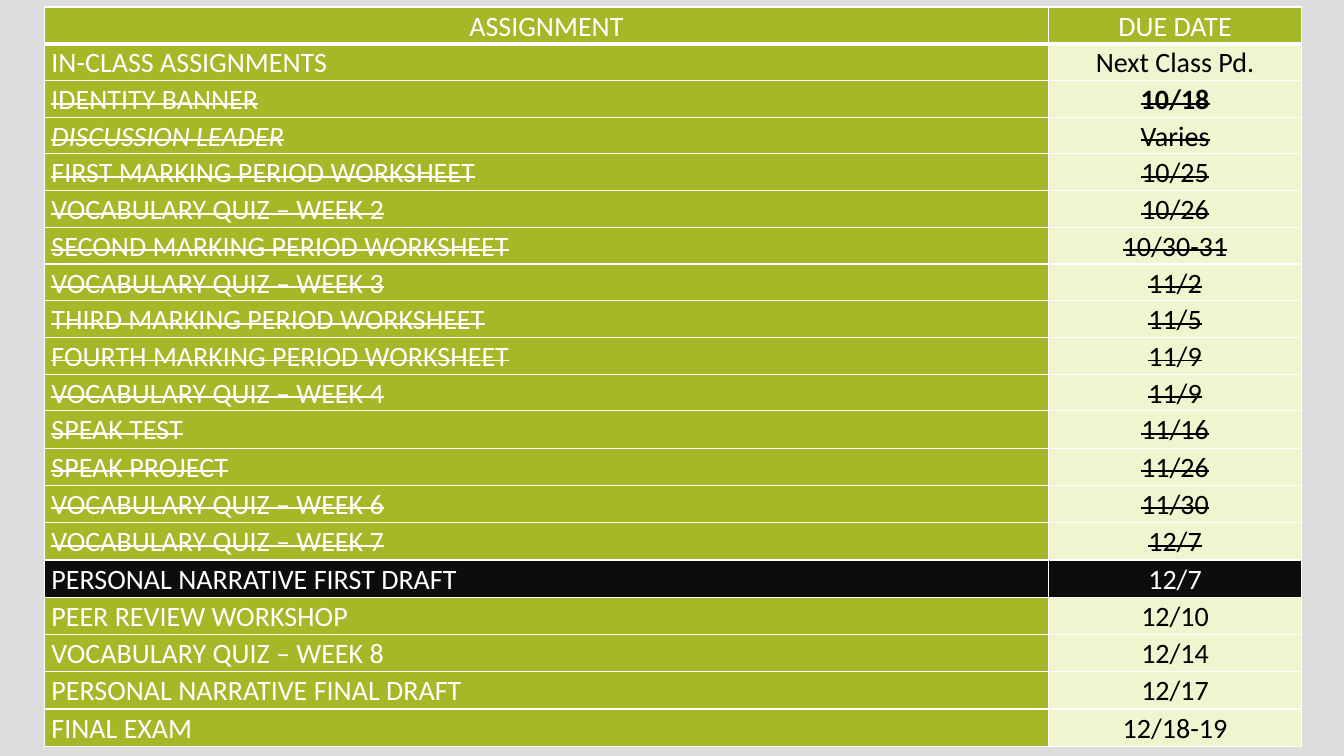
from lxml import etree
from pptx import Presentation
from pptx import util as u
from pptx.dml.color import RGBColor
from pptx.enum import text
from pptx.oxml import ns

GREEN, PALE, WHITE, BLACK, NEAR_BLACK = "A6B727", "F0F5D0", "FFFFFF", "000000", "0D0D0D"
CURRENT = "PERSONAL NARRATIVE FIRST DRAFT"

ASSIGNMENTS = [
    ("ASSIGNMENT", "DUE DATE"),
    ("IN-CLASS ASSIGNMENTS", "Next Class Pd."),
    ("IDENTITY BANNER", "10/18"),
    ("DISCUSSION LEADER", "Varies"),
    ("FIRST MARKING PERIOD WORKSHEET", "10/25"),
    ("VOCABULARY QUIZ – WEEK 2", "10/26"),
    ("SECOND MARKING PERIOD WORKSHEET", "10/30-31"),
    ("VOCABULARY QUIZ – WEEK 3", "11/2"),
    ("THIRD MARKING PERIOD WORKSHEET", "11/5"),
    ("FOURTH MARKING PERIOD WORKSHEET", "11/9"),
    ("VOCABULARY QUIZ – WEEK 4", "11/9"),
    ("SPEAK TEST", "11/16"),
    ("SPEAK PROJECT", "11/26"),
    ("VOCABULARY QUIZ – WEEK 6", "11/30"),
    ("VOCABULARY QUIZ – WEEK 7", "12/7"),
    (CURRENT, "12/7"),
    ("PEER REVIEW WORKSHOP", "12/10"),
    ("VOCABULARY QUIZ – WEEK 8", "12/14"),
    ("PERSONAL NARRATIVE FINAL DRAFT", "12/17"),
    ("FINAL EXAM", "12/18-19"),
]
FIRST_DONE, LAST_DONE = 2, 14


def color(value):
    return RGBColor.from_string(value)


def add_border(cell, side, points):
    line = etree.SubElement(cell._tc.get_or_add_tcPr(), ns.qn("a:ln" + side), w=str(u.Pt(points)))
    fill = etree.SubElement(line, ns.qn("a:solidFill"))
    etree.SubElement(fill, ns.qn("a:srgbClr"), val=WHITE)


# Slide
deck = Presentation()
deck.slide_width, deck.slide_height = u.Inches(13.33), u.Inches(7.5)
page = deck.slides.add_slide(deck.slide_layouts[6])
page.background.fill.solid()
page.background.fill.fore_color.rgb = color("DDDDDD")

# Table grid
table = page.shapes.add_table(len(ASSIGNMENTS), 2, u.Inches(0.44), u.Inches(0.07),
                              u.Inches(12.47), u.Inches(7.28)).table
table.first_row = table.horz_banding = False
table.columns[0].width, table.columns[1].width = u.Inches(9.96), u.Inches(2.51)

# Rows: finished work is struck through, the current task is dark
for row, entry in enumerate(ASSIGNMENTS):
    table.rows[row].height = u.Inches(0.35 if row < 11 else 0.37)
    header, current = row == 0, entry[0] == CURRENT
    for column, label in enumerate(entry):
        cell = table.cell(row, column)
        date = column == 1 and not header
        for side in "LRTB":
            add_border(cell, side, 3 if header and side == "B" else 1)
        cell.fill.solid()
        cell.fill.fore_color.rgb = color(NEAR_BLACK if current else PALE if date else GREEN)
        cell.margin_left = cell.margin_right = u.Inches(0.07)
        cell.margin_top = cell.margin_bottom = 0

        para = cell.text_frame.paragraphs[0]
        para.alignment = text.PP_ALIGN.CENTER if header or date else text.PP_ALIGN.LEFT
        para.line_spacing = 1.07
        span = para.add_run()
        span.text = label
        font = span.font
        font.name, font.size = "Calibri", u.Pt(20)
        font.bold = label == "10/18"
        font.italic = label == "DISCUSSION LEADER"
        font.color.rgb = color(BLACK if date and not current else WHITE)
        if FIRST_DONE <= row <= LAST_DONE:
            span._r.get_or_add_rPr().set("strike", "sngStrike")

deck.save("out.pptx")
